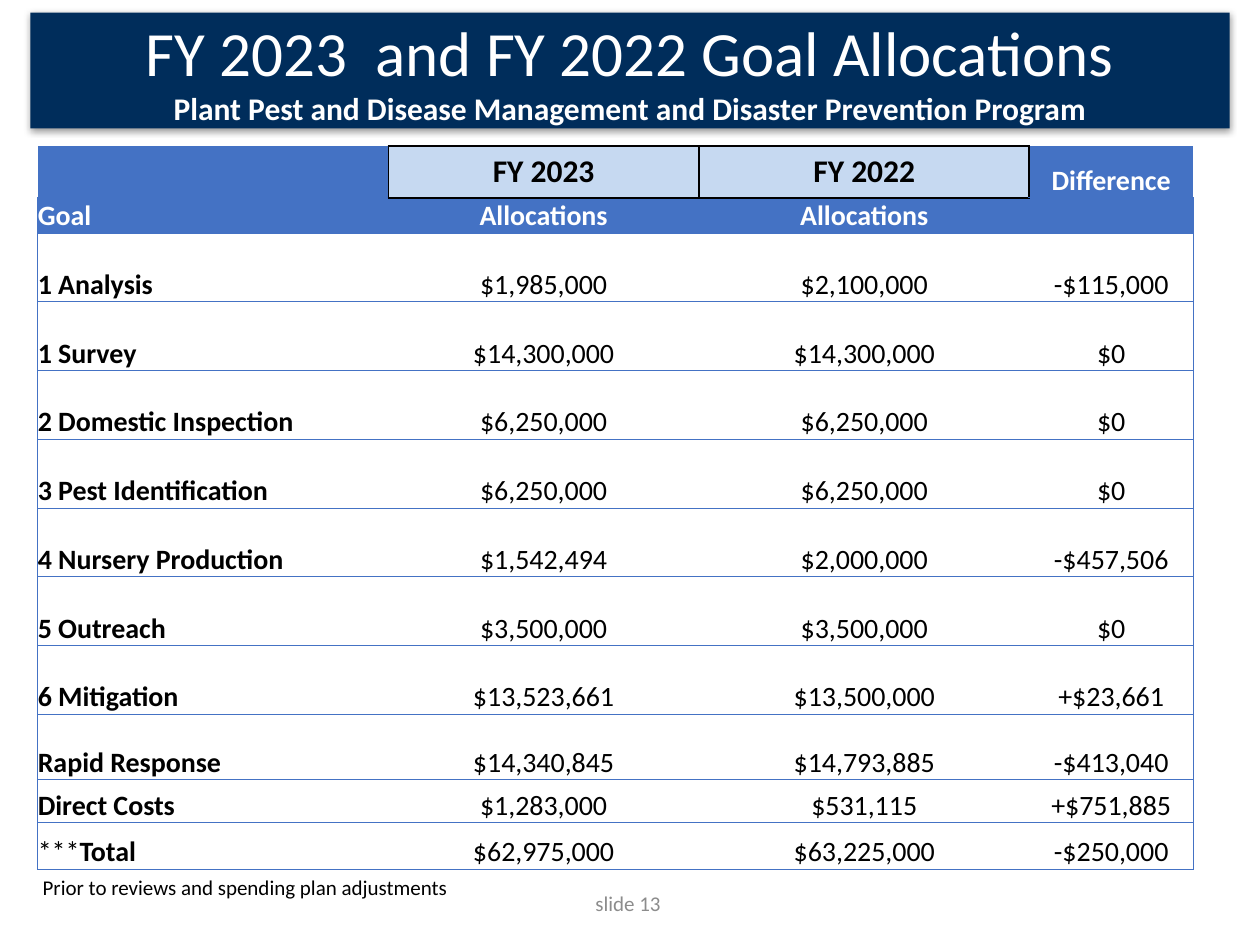
from lxml.etree import SubElement
from pptx import Presentation
from pptx.dml.color import RGBColor
from pptx.enum.text import MSO_ANCHOR, MSO_AUTO_SIZE, PP_ALIGN
from pptx.oxml import parse_xml
from pptx.oxml.ns import nsdecls, qn
from pptx.util import Inches, Pt

NAVY, BLUE, PALE = "002D5B", "4472C4", "C6D9F1"
WHITE, BLACK, GREY = "FFFFFF", "000000", "8C8C8C"
PLAIN = "{2D5ABB26-0587-4C30-8999-92F81FD0307C}"

TITLE = [
    ("FY 2023  and FY 2022 Goal Allocations", {"size": 36}),
    ("Plant Pest and Disease Management and Disaster Prevention Program",
     {"size": 18, "bold": True}),
]
ROWS = [
    ("", "FY 2023", "FY 2022", "Difference"),
    ("Goal", "Allocations", "Allocations", ""),
    ("1 Analysis", "$1,985,000", "$2,100,000", "-$115,000"),
    ("1 Survey", "$14,300,000", "$14,300,000", "$0"),
    ("2 Domestic Inspection", "$6,250,000", "$6,250,000", "$0"),
    ("3 Pest Identification", "$6,250,000", "$6,250,000", "$0"),
    ("4 Nursery Production", "$1,542,494", "$2,000,000", "-$457,506"),
    ("5 Outreach", "$3,500,000", "$3,500,000", "$0"),
    ("6 Mitigation", "$13,523,661", "$13,500,000", "+$23,661"),
    ("Rapid Response", "$14,340,845", "$14,793,885", "-$413,040"),
    ("Direct Costs", "$1,283,000", "$531,115", "+$751,885"),
    ("***Total", "$62,975,000", "$63,225,000", "-$250,000"),
]
WIDTHS = [2.78, 2.47, 2.62, 1.3]
HEIGHTS = [0.41, 0.27] + [3.82 / 7] * 7 + [0.52, 0.34, 0.37]
NOTES = [
    ("slide 13", (3.82, 6.97, 2.33, 0.4), GREY, PP_ALIGN.CENTER, MSO_ANCHOR.MIDDLE),
    ("Prior to reviews and spending plan adjustments", (0.24, 6.89, 5.01, 0.3),
     BLACK, PP_ALIGN.LEFT, MSO_ANCHOR.TOP),
]


def rgb(code):
    return RGBColor.from_string(code)


def paint(obj, code):
    obj.fill.solid()
    obj.fill.fore_color.rgb = rgb(code)


def write(para, text, color, size, bold=False, align=PP_ALIGN.CENTER):
    para.alignment = align
    run = para.add_run()
    run.text = text
    look = {"name": "Calibri", "size": Pt(size), "bold": bold}
    for key, value in look.items():
        setattr(run.font, key, value)
    run.font.color.rgb = rgb(color)


def rule(cell, sides):
    props = cell._tc.get_or_add_tcPr()
    for spot, side in enumerate(s for s in "LRTB" if s in sides):
        color, width = sides[side]
        line = parse_xml(
            f'<a:ln{side} {nsdecls("a")} w="{Pt(width)}"><a:solidFill>'
            f'<a:srgbClr val="{color}"/></a:solidFill></a:ln{side}>')
        props.insert(spot, line)


def edges(row, col):
    if row == 0 and col in (1, 2):
        return {"L": (BLACK, 1.5 if col == 2 else 0.5), "R": (BLACK, 1.5),
                "T": (BLACK, 1), "B": (BLACK, 1)}
    thin = (BLUE, 0.5)
    sides = {"B": thin}
    if row:
        sides["T"] = (BLACK, 1) if row == 1 and col in (1, 2) else thin
        if col == 0:
            sides["L"] = thin
        if col == 3:
            sides["R"] = thin
    elif col == 3:
        sides["L"] = (BLACK, 1.5)
    return sides


def add_title(slide):
    title = slide.shapes.title
    place = {"left": 0.24, "top": 0.1, "width": 9.52, "height": 0.92}
    for key, value in place.items():
        setattr(title, key, Inches(value))
    paint(title, NAVY)
    title._element.spPr.append(parse_xml(
        f'<a:effectLst {nsdecls("a")}><a:outerShdw blurRad="50800" dist="12700" '
        'dir="5400000"><a:srgbClr val="000000"><a:alpha val="40000"/></a:srgbClr>'
        '</a:outerShdw></a:effectLst>'))
    frame = title.text_frame
    look = {"auto_size": MSO_AUTO_SIZE.NONE, "word_wrap": True,
            "vertical_anchor": MSO_ANCHOR.MIDDLE, "margin_top": 0, "margin_bottom": 0}
    for key, value in look.items():
        setattr(frame, key, value)
    for spot, (text, form) in enumerate(TITLE):
        para = frame.add_paragraph() if spot else frame.paragraphs[0]
        para.line_spacing, para.space_before = 1.0, Pt(0)
        write(para, text, WHITE, **form)


def fill_cell(cell, text, row, col):
    top = row == 0 and col in (1, 2)
    look = {"margin_left": 0, "margin_right": 0, "margin_top": 0, "margin_bottom": 0,
            "vertical_anchor": MSO_ANCHOR.MIDDLE if top else MSO_ANCHOR.BOTTOM}
    for key, value in look.items():
        setattr(cell, key, value)
    if row < 2:
        paint(cell, PALE if top else BLUE)
    else:
        cell.fill.background()
    para = cell.text_frame.paragraphs[0]
    color = WHITE if row < 2 and not top else BLACK
    form = {"size": 18 if top else 16, "align": PP_ALIGN.LEFT if col == 0 else PP_ALIGN.CENTER}
    name = text.lstrip("*")
    if name != text:
        write(para, text[:-len(name)], color, **form)
    write(para, name, color, bold=row < 2 or col == 0, **form)
    rule(cell, edges(row, col))


def add_goals(slide):
    frame = slide.shapes.add_table(
        len(ROWS), len(WIDTHS), Inches(0.3), Inches(1.16),
        Inches(sum(WIDTHS)), Inches(sum(HEIGHTS)))
    table = frame.table
    table.first_row = table.horz_banding = False
    table._tbl.tblPr.find(qn("a:tableStyleId")).text = PLAIN
    for col, width in zip(table.columns, WIDTHS):
        col.width = Inches(width)
    for line, height in zip(table.rows, HEIGHTS):
        line.height = Inches(height)
    for row, texts in enumerate(ROWS):
        for col, text in enumerate(texts):
            fill_cell(table.cell(row, col), text, row, col)


def add_note(slide, text, place, color, align, anchor):
    frame = slide.shapes.add_textbox(*map(Inches, place)).text_frame
    frame.word_wrap = True
    frame.vertical_anchor = anchor
    write(frame.paragraphs[0], text, color, 12, align=align)


def main():
    deck = Presentation()
    deck.slide_width, deck.slide_height = Inches(10), Inches(7.5)
    slide = deck.slides.add_slide(deck.slide_layouts[5])
    add_title(slide)
    add_goals(slide)
    for note in NOTES:
        add_note(slide, *note)
    deck.save("out.pptx")


if __name__ == "__main__":
    main()
